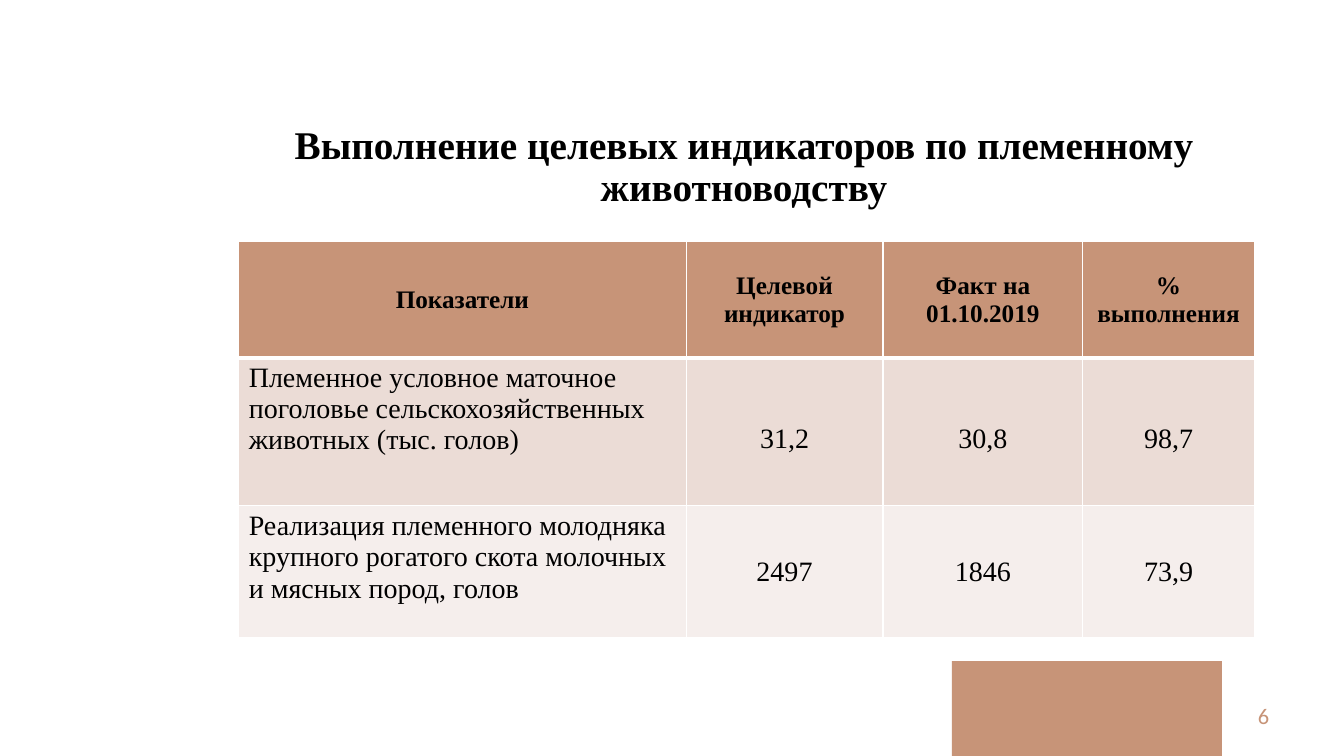
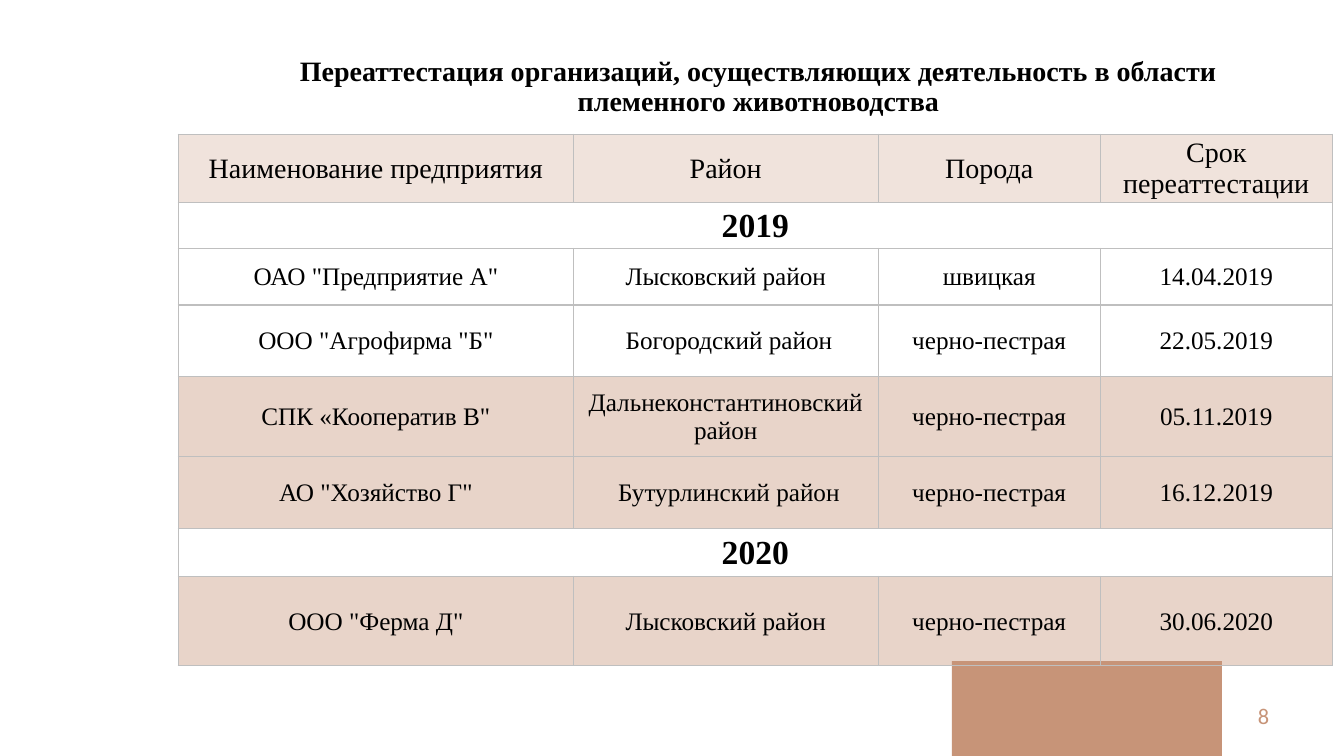
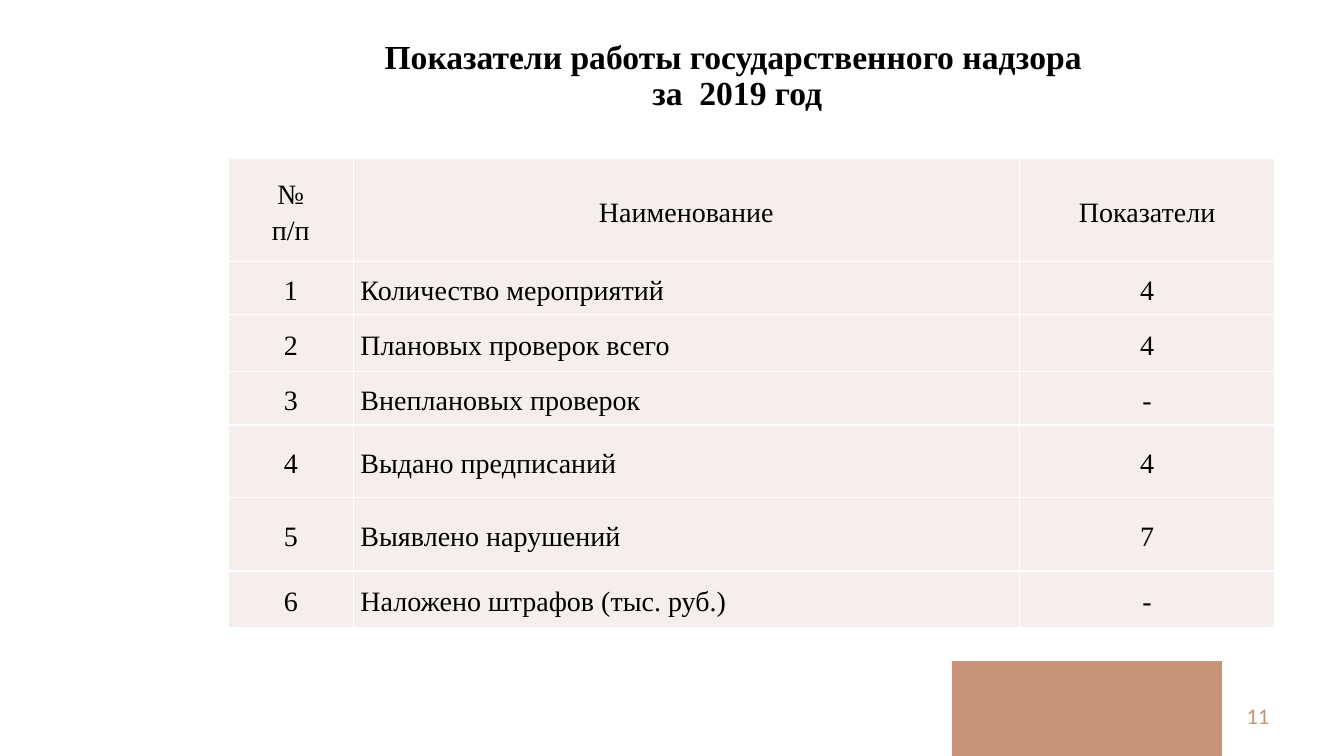
from dataclasses import dataclass
from typing import Optional

from lxml.etree import SubElement
from pptx import Presentation
from pptx.dml.color import RGBColor
from pptx.enum.shapes import MSO_SHAPE as Shape
from pptx.enum.text import MSO_ANCHOR as Anchor, MSO_AUTO_SIZE as AutoSize, PP_ALIGN as Align
from pptx.oxml.ns import qn
from pptx.util import Pt

ACCENT = RGBColor(0xC7, 0x94, 0x78)
ROSE = RGBColor(0xEB, 0xDC, 0xD6)
PALE = RGBColor(0xF5, 0xEE, 0xEC)
GRID = RGBColor(0xBF, 0xBF, 0xBF)
WHITE = RGBColor(0xFF, 0xFF, 0xFF)
BLACK = RGBColor(0, 0, 0)
SERIF = "Times New Roman"
SANS = "Calibri"


@dataclass
class Title:
    text: str
    box: tuple[float, float, float, float]
    size: float
    anchor: Anchor = Anchor.MIDDLE
    before: float = 0


@dataclass
class Row:
    height: float
    texts: tuple[str, ...]
    size: float = 20
    bold: bool = False
    fill: Optional[RGBColor] = None
    alpha: int = 100
    spacing: float = 1.0


@dataclass
class Grid:
    left: float
    top: float
    widths: tuple[float, ...]
    rows: list[Row]
    border: RGBColor
    margins: tuple[float, float, float, float] = (7.2, 3.6, 7.2, 3.6)
    left_col: Optional[int] = None
    left_anchor: Anchor = Anchor.MIDDLE
    header_rule: float = 1


@dataclass
class Page:
    number: int
    title: Title
    grid: Grid


def write(tf, text: str, *, size: float, font: str = SERIF, color: RGBColor = BLACK,
          bold: bool = False, align: Align = Align.CENTER, spacing: float = 1.0,
          before: float = 0) -> None:
    p = tf.paragraphs[0]
    p.text = text
    p.alignment = align
    p.line_spacing = spacing
    p.space_before = Pt(before)
    for r in p.runs:
        r.font.name = font
        r.font.size = Pt(size)
        r.font.bold = bold
        r.font.color.rgb = color


def add_band(s, layout) -> None:
    sp = s.shapes.add_shape(Shape.RECTANGLE, Pt(680), Pt(472.2), Pt(192.8), Pt(67.8))
    sp.shadow.inherit = False
    sp.fill.solid()
    sp.fill.fore_color.rgb = ACCENT
    sp.line.fill.background()
    layout.shapes._spTree.append(sp._element)


def add_title(s, title: Title) -> None:
    sp = s.shapes.title
    sp.left, sp.top, sp.width, sp.height = (Pt(v) for v in title.box)
    tf = sp.text_frame
    tf.word_wrap = True
    tf.auto_size = AutoSize.NONE
    tf.vertical_anchor = title.anchor
    write(tf, title.text, size=title.size, bold=True, spacing=0.9, before=title.before)


def add_number(s, number: int) -> None:
    tf = s.shapes.add_textbox(Pt(697.7), Pt(496.8), Pt(216), Pt(28.8)).text_frame
    tf.word_wrap = True
    tf.vertical_anchor = Anchor.MIDDLE
    write(tf, str(number), size=16, font=SANS, color=ACCENT, align=Align.RIGHT)


def set_borders(cell, color: RGBColor, top: float, bottom: float) -> None:
    tc_pr = cell._tc.get_or_add_tcPr()
    for side, width in (("L", 1), ("R", 1), ("T", top), ("B", bottom)):
        ln = SubElement(tc_pr, qn(f"a:ln{side}"), w=str(Pt(width)))
        SubElement(SubElement(ln, qn("a:solidFill")), qn("a:srgbClr"), val=str(color))


def set_fill(cell, color: Optional[RGBColor], alpha: int) -> None:
    if color is None:
        cell.fill.background()
        return
    cell.fill.solid()
    cell.fill.fore_color.rgb = color
    if alpha < 100:
        clr = cell._tc.tcPr.find(qn("a:solidFill")).find(qn("a:srgbClr"))
        SubElement(clr, qn("a:alpha"), val=str(alpha * 1000))


def add_grid(s, grid: Grid) -> None:
    height = sum(row.height for row in grid.rows)
    tbl = s.shapes.add_table(len(grid.rows), len(grid.widths), Pt(grid.left), Pt(grid.top),
                             Pt(sum(grid.widths)), Pt(height)).table
    tbl.first_row = tbl.horz_banding = False
    for col, width in zip(tbl.columns, grid.widths):
        col.width = Pt(width)
    for i, row in enumerate(grid.rows):
        tbl.rows[i].height = Pt(row.height)
        for j in range(len(grid.widths)):
            cell = tbl.cell(i, j)
            set_borders(cell, grid.border, grid.header_rule if i == 1 else 1,
                        grid.header_rule if i == 0 else 1)
            set_fill(cell, row.fill, row.alpha)
        if len(row.texts) == 1:
            tbl.cell(i, 0).merge(tbl.cell(i, len(grid.widths) - 1))
        for j, text in enumerate(row.texts):
            cell = tbl.cell(i, j)
            (cell.margin_left, cell.margin_top,
             cell.margin_right, cell.margin_bottom) = (Pt(v) for v in grid.margins)
            lead = i > 0 and j == grid.left_col
            cell.vertical_anchor = grid.left_anchor if lead else Anchor.MIDDLE
            spacing = 1.0 if lead and grid.left_anchor == Anchor.TOP else row.spacing
            write(cell.text_frame, text, size=row.size, bold=row.bold, spacing=spacing,
                  align=Align.LEFT if lead else Align.CENTER)


def year(height: float, text: str) -> Row:
    return Row(height, (text,), size=24, bold=True)


def farm(height: float, *texts: str, tinted: bool = True) -> Row:
    return Row(height, texts, size=18, fill=ACCENT if tinted else None, alpha=40)


def measure(height: float, *texts: str) -> Row:
    return Row(height, texts, fill=PALE, spacing=1.15)


PAGES = [
    Page(6, Title("Выполнение целевых индикаторов по племенному животноводству",
                  (201.6, 74.9, 659.5, 90), 28),
         Grid(170.5, 172.5, (319.6, 140.6, 142.8, 122.5), [
             Row(83, ("Показатели", "Целевой индикатор", "Факт на 01.10.2019", "% выполнения"),
                 size=18, bold=True, fill=ACCENT),
             Row(105.8, ("Племенное условное маточное поголовье сельскохозяйственных "
                         "животных (тыс. голов)", "31,2", "30,8", "98,7"),
                 fill=ROSE, spacing=1.5),
             Row(94, ("Реализация племенного молодняка крупного рогатого скота молочных "
                      "и мясных пород, голов", "2497", "1846", "73,9"), fill=PALE),
         ], WHITE, left_col=0, left_anchor=Anchor.TOP, header_rule=3)),
    Page(8, Title("Переаттестация организаций, осуществляющих деятельность в области "
                  "племенного животноводства", (156.2, 20.2, 771.1, 85), 20),
         Grid(127.4, 95.8, (282.2, 217.7, 158.7, 165.7), [
             Row(48.5, ("Наименование предприятия", "Район", "Порода", "Срок переаттестации"),
                 fill=ACCENT, alpha=26),
             year(33, "2019"),
             farm(40.3, 'ОАО "Предприятие А"', "Лысковский район", "швицкая", "14.04.2019",
                  tinted=False),
             farm(51.3, 'ООО "Агрофирма "Б"', " Богородский район", "черно-пестрая",
                  "22.05.2019", tinted=False),
             farm(56.7, 'СПК «Кооператив В"', "Дальнеконстантиновский район", "черно-пестрая",
                  "05.11.2019"),
             farm(51.5, 'АО "Хозяйство Г"', " Бутурлинский район", "черно-пестрая", "16.12.2019"),
             year(34.5, "2020"),
             farm(63.6, 'ООО "Ферма Д"', "Лысковский район", "черно-пестрая", "30.06.2020"),
         ], GRID, margins=(0.7, 0.7, 0.7, 0))),
    Page(11, Title("Показатели работы государственного надзора \nза  2019 год",
                   (174.2, 28.8, 704.9, 55.4), 24, Anchor.BOTTOM, 10),
         Grid(162.9, 113.2, (89.6, 475.5, 182.8), [
             measure(73.4, "№\nп/п", "Наименование", "Показатели"),
             measure(38, "1", "Количество мероприятий", "4"),
             measure(41, "2", "Плановых проверок всего", "4"),
             measure(38, "3", "Внеплановых проверок", "-"),
             measure(52.1, "4", "Выдано предписаний", "4"),
             measure(52.3, "5", "Выявлено нарушений", "7"),
             measure(40.1, "6", "Наложено штрафов (тыс. руб.)", "-"),
         ], WHITE, margins=(5, 0.7, 5, 0), left_col=1)),
]


def main() -> None:
    prs = Presentation()
    prs.slide_width, prs.slide_height = Pt(960), Pt(540)
    layout = prs.slide_layouts[5]
    for i, page in enumerate(PAGES):
        s = prs.slides.add_slide(layout)
        if i == 0:
            add_band(s, layout)
        add_title(s, page.title)
        add_number(s, page.number)
        add_grid(s, page.grid)
    prs.save("out.pptx")


if __name__ == "__main__":
    main()
